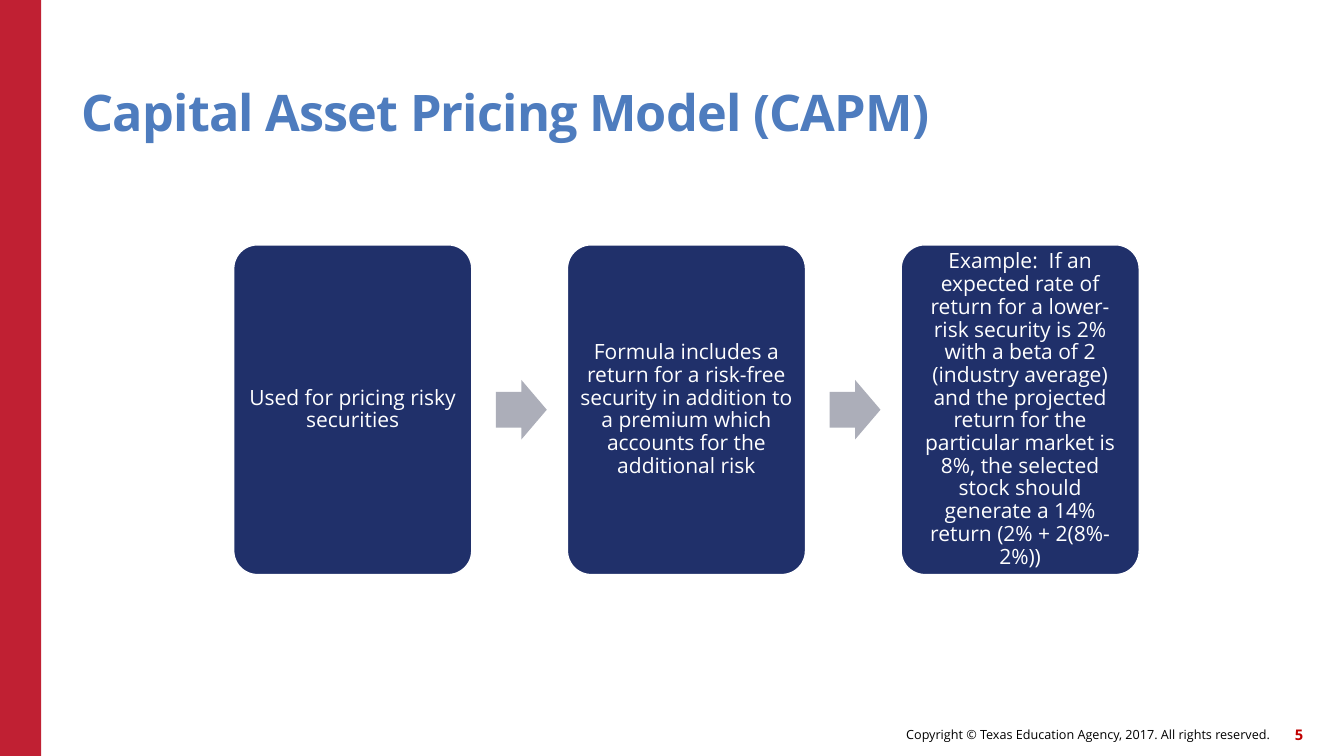
import pptx
import pptx.util
import pptx.dml.color
import pptx.enum.shapes
import pptx.enum.text
from dataclasses import dataclass

Cm = pptx.util.Cm
Shape = pptx.enum.shapes.MSO_SHAPE
Align = pptx.enum.text.PP_ALIGN
Anchor = pptx.enum.text.MSO_ANCHOR


@dataclass(frozen=True)
class Theme:
    """Colours, font and type sizes of the deck."""
    font: str = "Open Sans"
    red: str = "C02033"
    number: str = "C00000"
    blue: str = "4E7CBE"
    navy: str = "20306A"
    grey: str = "ACAEB9"
    white: str = "FFFFFF"
    black: str = "000000"
    title_size: float = 36
    card_size: float = 15
    footer_size: float = 9
    number_size: float = 10.5


THEME = Theme()
STEPS = [
    "Used for pricing risky securities",
    "Formula includes a return for a risk-free security in addition to a "
    "premium which accounts for the additional risk",
    "Example:  If an expected rate of return for a lower-risk security is 2% "
    "with a beta of 2 (industry average) and the projected return for the "
    "particular market is 8%, the selected stock should generate a 14% "
    "return (2% + 2(8%-2%))",
]


def rgb(value):
    """Return a colour from its hex string."""
    return pptx.dml.color.RGBColor.from_string(value)


def set_text(sp, text, size, color, bold=False, align=Align.LEFT,
             anchor=Anchor.MIDDLE, inset=0, line_spacing=None, tracking=None):
    """Write one formatted paragraph into a shape."""
    tf = sp.text_frame
    tf.word_wrap = True
    tf.vertical_anchor = anchor
    tf.margin_left = tf.margin_right = Cm(inset)
    tf.margin_top = tf.margin_bottom = Cm(inset)
    p = tf.paragraphs[0]
    p.alignment = align
    if line_spacing:
        p.line_spacing = line_spacing
    r = p.add_run()
    r.text = text
    r.font.name = THEME.font
    r.font.size = pptx.util.Pt(size)
    r.font.bold = bold
    r.font.color.rgb = rgb(color)
    if tracking:
        r._r.get_or_add_rPr().set("spc", str(round(tracking * 100)))


def add_block(s, kind, box, fill, line=None, adjustments=()):
    """Add a filled preset shape in a box given in centimetres."""
    sp = s.shapes.add_shape(kind, *map(Cm, box))
    sp.shadow.inherit = False
    sp.fill.solid()
    sp.fill.fore_color.rgb = rgb(fill)
    if line:
        sp.line.color.rgb = rgb(line)
        sp.line.width = pptx.util.Pt(1)
    else:
        sp.line.fill.background()
    for i, value in enumerate(adjustments):
        sp.adjustments[i] = value
    return sp


def add_title(s, box, text):
    """Add the slide title."""
    set_text(s.shapes.add_textbox(*map(Cm, box)), text, THEME.title_size,
             THEME.blue, bold=True, anchor=Anchor.BOTTOM, line_spacing=0.9,
             tracking=-0.6)


def add_footer(s, box, text, number):
    """Add the copyright line and the page number at the right of the box."""
    x, y, w, h = box
    number_w, gap = 1.07, 0.84
    copyright_box = (x, y, w - gap, h)
    number_box = (x + w - number_w, y, number_w, h)
    set_text(s.shapes.add_textbox(*map(Cm, copyright_box)), text,
             THEME.footer_size, THEME.black, align=Align.RIGHT)
    set_text(s.shapes.add_textbox(*map(Cm, number_box)), number,
             THEME.number_size, THEME.number, bold=True, align=Align.RIGHT)


def add_process(s, box, steps):
    """Add a row of cards with an arrow in each gap."""
    x, y, w, h = box
    card_w, arrow_w, arrow_h, arrow_gap = 6, 1.28, 1.5, 0.61
    pitch = (w - card_w) / (len(steps) - 1)
    for i, text in enumerate(steps):
        left = x + i * pitch
        sp = add_block(s, Shape.ROUNDED_RECTANGLE, (left, y, card_w, h),
                       THEME.navy, THEME.white, [0.1])
        set_text(sp, text, THEME.card_size, THEME.white, align=Align.CENTER,
                 inset=0.15, line_spacing=0.9)
        if i < len(steps) - 1:
            arrow = (left + card_w + arrow_gap, y + (h - arrow_h) / 2,
                     arrow_w, arrow_h)
            add_block(s, Shape.RIGHT_ARROW, arrow, THEME.grey,
                      adjustments=[0.6, 0.5])


def main():
    """Build and save the slide."""
    prs = pptx.Presentation()
    prs.slide_width, prs.slide_height = Cm(33.87), Cm(19.05)
    s = prs.slides.add_slide(prs.slide_layouts[6])
    add_block(s, Shape.RECTANGLE, (0, 0, 1.04, 19.05), THEME.red)
    add_footer(s, (15.6, 18.1, 17.24, 0.81),
               "Copyright © Texas Education Agency, 2017. All rights reserved.",
               "5")
    add_title(s, (2.06, 1.14, 27.94, 2.44),
              "Capital Asset Pricing Model (CAPM)")
    add_process(s, (5.89, 6.17, 22.82, 8.31), STEPS)
    prs.save("out.pptx")


if __name__ == "__main__":
    main()
